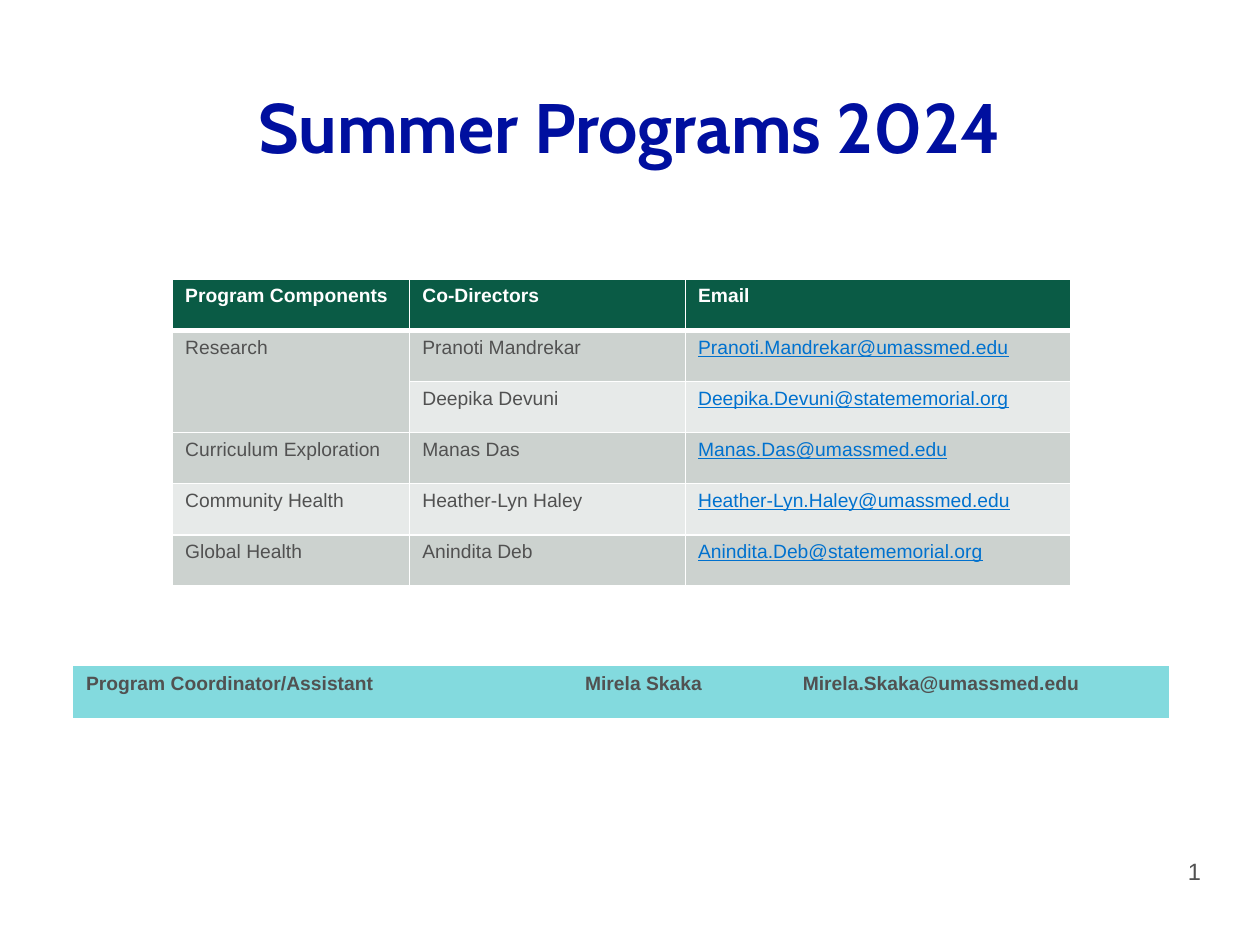
from lxml import etree
from pptx import Presentation
from pptx import util as u
from pptx.dml.color import RGBColor
from pptx.enum import text
from pptx.oxml import ns

COLORS = {
    "title": "000F9F", "text": "515151", "link": "0071CE", "white": "FFFFFF",
    "header": "0A5B45", "dark": "CCD2CF", "light": "E7EAE9", "bar": "83DADE",
}
PROGRAMS = [
    ("Program Components", "Co-Directors", "Email"),
    ("Research", "Pranoti Mandrekar", "Pranoti.Mandrekar@umassmed.edu"),
    ("", "Deepika Devuni", "Deepika.Devuni@statememorial.org"),
    ("Curriculum Exploration", "Manas Das", "Manas.Das@umassmed.edu"),
    ("Community Health", "Heather-Lyn Haley", "Heather-Lyn.Haley@umassmed.edu"),
    ("Global Health", "Anindita Deb", "Anindita.Deb@statememorial.org"),
]
COORDINATOR = [("Program Coordinator/Assistant", "Mirela Skaka", "Mirela.Skaka@umassmed.edu")]


class SlideBuilder:
    """Hold the slide and its style, and add text boxes and tables."""

    def __init__(self, slide, font="Arial", cell_size=11, row_height=1.03):
        self.slide = slide
        self.font = font
        self.cell_size = cell_size
        self.row_height = row_height

    def style(self, p, size, color, bold=False, underline=False, font=None):
        p.font.name = font or self.font
        p.font.size = u.Pt(size)
        p.font.bold = bold
        p.font.underline = underline
        p.font.color.rgb = RGBColor.from_string(COLORS[color])

    def text(self, words, box, size, color, align, anchor, spacing=1.0, **look):
        sp = self.slide.shapes.add_textbox(*map(u.Cm, box))
        tf = sp.text_frame
        tf.word_wrap = True
        tf.vertical_anchor = anchor
        p = tf.paragraphs[0]
        p.text = words
        p.alignment = align
        p.line_spacing = spacing
        self.style(p, size, color, **look)

    def borders(self, cell, color, widths):
        tc_pr = cell._tc.get_or_add_tcPr()
        for i, (side, width) in enumerate(zip("LRTB", widths)):
            ln = etree.Element(ns.qn(f"a:ln{side}"), w=str(u.Pt(width)))
            fill = etree.SubElement(ln, ns.qn("a:solidFill"))
            etree.SubElement(fill, ns.qn("a:srgbClr"), val=COLORS[color])
            tc_pr.insert(i, ln)

    def cell(self, cell, words, fill, color, **look):
        cell.fill.solid()
        cell.fill.fore_color.rgb = RGBColor.from_string(COLORS[fill])
        p = cell.text_frame.paragraphs[0]
        p.text = words
        self.style(p, self.cell_size, color, **look)

    def table(self, rows, left, top, widths):
        frame = self.slide.shapes.add_table(
            len(rows), len(widths), u.Cm(left), u.Cm(top),
            u.Cm(sum(widths)), u.Cm(self.row_height * len(rows)))
        table = frame.table
        for column, width in zip(table.columns, widths):
            column.width = u.Cm(width)
        for row in table.rows:
            row.height = u.Cm(self.row_height)
        return table

    def programs(self, rows, left, top, widths):
        table = self.table(rows, left, top, widths)
        for i, row in enumerate(rows):
            for j, words in enumerate(row):
                cell = table.cell(i, j)
                if i == 0:
                    self.cell(cell, words, "header", "white", bold=True)
                else:
                    link = j == 2
                    self.cell(cell, words, "dark" if i % 2 else "light",
                              "link" if link else "text", underline=link)
                self.borders(cell, "white", (1, 1, 3 if i == 1 else 1, 3 if i == 0 else 1))
        table.cell(1, 0).merge(table.cell(2, 0))

    def bar(self, rows, left, top, widths):
        table = self.table(rows, left, top, widths)
        for j, words in enumerate(rows[0]):
            cell = table.cell(0, j)
            self.cell(cell, words, "bar", "text", bold=True)
            self.borders(cell, "bar", (0.5,) * 4)


def main():
    prs = Presentation()
    prs.slide_width, prs.slide_height = u.Cm(25.4), u.Cm(19.05)
    s = SlideBuilder(prs.slides.add_slide(prs.slide_layouts[6]))
    s.text("1", (18.75, 17.04, 5.71, 1.02), 13.5, "text",
           text.PP_ALIGN.RIGHT, text.MSO_ANCHOR.MIDDLE)
    s.text("Summer Programs 2024", (1.9, 1.75, 21.6, 4.6), 40, "title",
           text.PP_ALIGN.CENTER, text.MSO_ANCHOR.TOP, spacing=0.9, bold=True, font="Cabin")
    s.programs(PROGRAMS, 3.48, 5.63, (4.78, 5.56, 7.76))
    s.bar(COORDINATOR, 1.48, 13.44, (10.06, 4.39, 7.62))
    prs.save("out.pptx")


if __name__ == "__main__":
    main()
